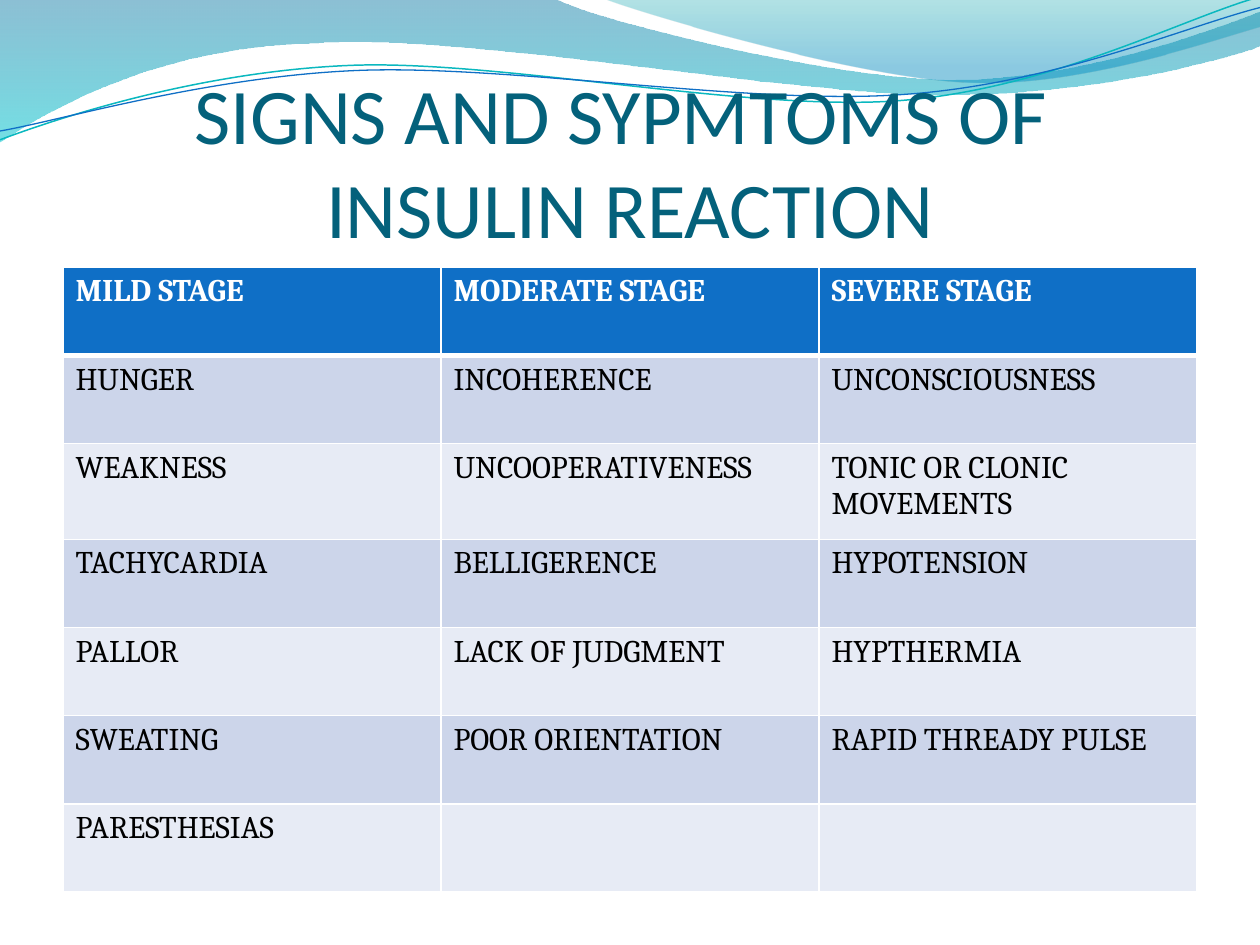
"""Build the slide on the signs and symptoms of insulin reaction."""
import lxml.etree
import pptx
import pptx.dml.color
import pptx.enum.text
import pptx.oxml.ns
import pptx.util

Inches, Pt, qn = pptx.util.Inches, pptx.util.Pt, pptx.oxml.ns.qn

TITLE = "SIGNS AND SYPMTOMS OF \vINSULIN REACTION"
ROWS = [
    ("MILD STAGE", "MODERATE STAGE", "SEVERE STAGE"),
    ("HUNGER", "INCOHERENCE", "UNCONSCIOUSNESS"),
    ("WEAKNESS", "UNCOOPERATIVENESS", "TONIC OR CLONIC MOVEMENTS"),
    ("TACHYCARDIA", "BELLIGERENCE", "HYPOTENSION"),
    ("PALLOR", "LACK OF JUDGMENT", "HYPTHERMIA"),
    ("SWEATING", "POOR ORIENTATION", "RAPID THREADY PULSE"),
    ("PARESTHESIAS", "", ""),
]
ROW_H, TALL_ROW, TALL_H = 0.7, 2, 0.76
HEADER, BANDS = "0F6FC6", ("E7EBF5", "CCD5EA")

WAVES = [
    ([(0, 0), (4.4, -0.01),
      (4.76, 0.17, 6.64, 0.63, 7.58, 0.63), (8.53, 0.63, 9.58, 0.26, 10, 0.09),
      (10.01, 0.36),
      (9.83, 0.44, 8.7, 0.76, 7.46, 0.75), (6.22, 0.75, 3.82, 0.28, 2.57, 0.34),
      (1.29, 0.36, 0.46, 0.83, -0.01, 1.13), (0, 0)],
     [(0, "0074A1", 45), (1, "00C6CF", 55)]),
    ([(4.79, -0.01),
      (5.09, 0.11, 6.82, 0.62, 7.69, 0.65), (8.56, 0.69, 9.61, 0.32, 10, 0.21),
      (10, 0), (4.79, -0.01)],
     [(0, "00A1A9", 30), (0.8, "008BBF", 45)]),
]
CURVES = [
    ([(0, 1.11), (0.48, 0.93, 1.58, 0.57, 2.77, 0.52),
      (3.95, 0.47, 5.93, 0.89, 7.13, 0.8), (8.33, 0.71, 9.38, 0.15, 9.98, -0.02)],
     "0AB8BF", 0.85),
    ([(0, 1.04), (0.47, 0.96, 1.64, 0.61, 2.83, 0.56),
      (4.03, 0.51, 5.97, 0.84, 7.17, 0.75), (8.36, 0.67, 9.41, 0.21, 10, 0.06)],
     "0F6FC6", 0.75),
]


def rgb(color):
    return pptx.dml.color.RGBColor.from_string(color)


def add_path(s, path, close):
    nodes = [(Inches(seg[-2]), Inches(seg[-1])) for seg in path]
    fb = s.shapes.build_freeform(*nodes[0])
    fb.add_line_segments(nodes[1:], close=close)
    sp = fb.convert_to_shape()
    sp.shadow.inherit = False
    lines = list(sp._element.iter(qn("a:lnTo")))
    for line, seg in zip(lines, path[1:]):
        if len(seg) == 6:
            bend_segment(sp, line, seg)
    return sp


def bend_segment(sp, line, seg):
    line.tag = qn("a:cubicBezTo")
    for i, (x, y) in enumerate((seg[:2], seg[2:4])):
        pt = lxml.etree.Element(qn("a:pt"), x=str(Inches(x) - sp.left),
                                y=str(Inches(y) - sp.top))
        line.insert(i, pt)


def add_wave(s, path, stops):
    sp = add_path(s, path, True)
    sp.line.fill.background()
    sp.fill.gradient()
    sp.fill.gradient_angle = 270
    for stop, (pos, color, _) in zip(sp.fill.gradient_stops, stops):
        stop.position = pos
        stop.color.rgb = rgb(color)
    for clr, (_, _, alpha) in zip(sp._element.spPr.iter(qn("a:srgbClr")), stops):
        lxml.etree.SubElement(clr, qn("a:alpha"), val=str(alpha * 1000))


def add_curve(s, path, color, width):
    sp = add_path(s, path, False)
    sp.fill.background()
    sp.line.color.rgb = rgb(color)
    sp.line.width = Pt(width)


def format_runs(p, font, size, color, bold=False):
    for r in p.runs:
        r.font.name, r.font.size, r.font.bold = font, Pt(size), bold
        r.font.color.rgb = rgb(color)


def add_title(s):
    sp = s.shapes.add_textbox(Inches(0.5), Inches(0.77), Inches(9), Inches(1.25))
    tf = sp.text_frame
    tf.word_wrap = True
    tf.vertical_anchor = pptx.enum.text.MSO_ANCHOR.BOTTOM
    tf.margin_left = tf.margin_right = tf.margin_bottom = 0
    p = tf.paragraphs[0]
    p.text = TITLE
    p.alignment = pptx.enum.text.PP_ALIGN.CENTER
    format_runs(p, "Calibri", 45, "04617B")


def set_borders(cell, top, bottom):
    tcPr = cell._tc.get_or_add_tcPr()
    for i, (side, width) in enumerate(zip("LRTB", (1, 1, top, bottom))):
        ln = lxml.etree.Element(qn("a:ln" + side), w=str(Pt(width)))
        fill = lxml.etree.SubElement(ln, qn("a:solidFill"))
        lxml.etree.SubElement(fill, qn("a:srgbClr"), val="FFFFFF")
        tcPr.insert(i, ln)


def add_stages(s):
    heights = [TALL_H if i == TALL_ROW else ROW_H for i in range(len(ROWS))]
    table = s.shapes.add_table(len(ROWS), len(ROWS[0]), Inches(0.5), Inches(2.12),
                               Inches(9), Inches(sum(heights))).table
    for i, row in enumerate(ROWS):
        table.rows[i].height = Inches(heights[i])
        head = i == 0
        for j, text in enumerate(row):
            cell = table.cell(i, j)
            cell.text_frame.text = text
            format_runs(cell.text_frame.paragraphs[0], "Cambria", 18,
                        "FFFFFF" if head else "000000", head)
            cell.fill.solid()
            cell.fill.fore_color.rgb = rgb(HEADER if head else BANDS[i % 2])
            set_borders(cell, 3 if i == 1 else 1, 3 if head else 1)


def main():
    prs = pptx.Presentation()
    prs.slide_width, prs.slide_height = Inches(10), Inches(7.5)
    s = prs.slides.add_slide(prs.slide_layouts[6])
    for wave in WAVES:
        add_wave(s, *wave)
    for curve in CURVES:
        add_curve(s, *curve)
    add_title(s)
    add_stages(s)
    prs.save("out.pptx")


if __name__ == "__main__":
    main()
